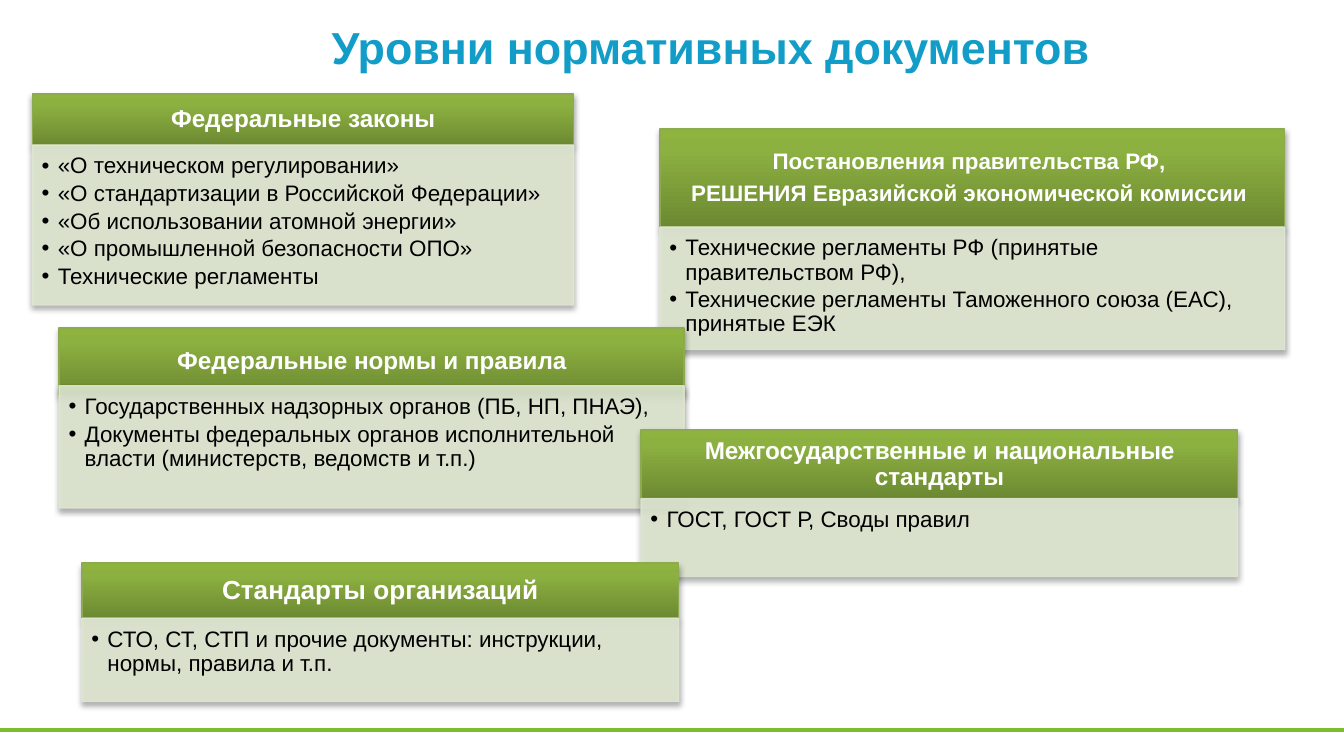
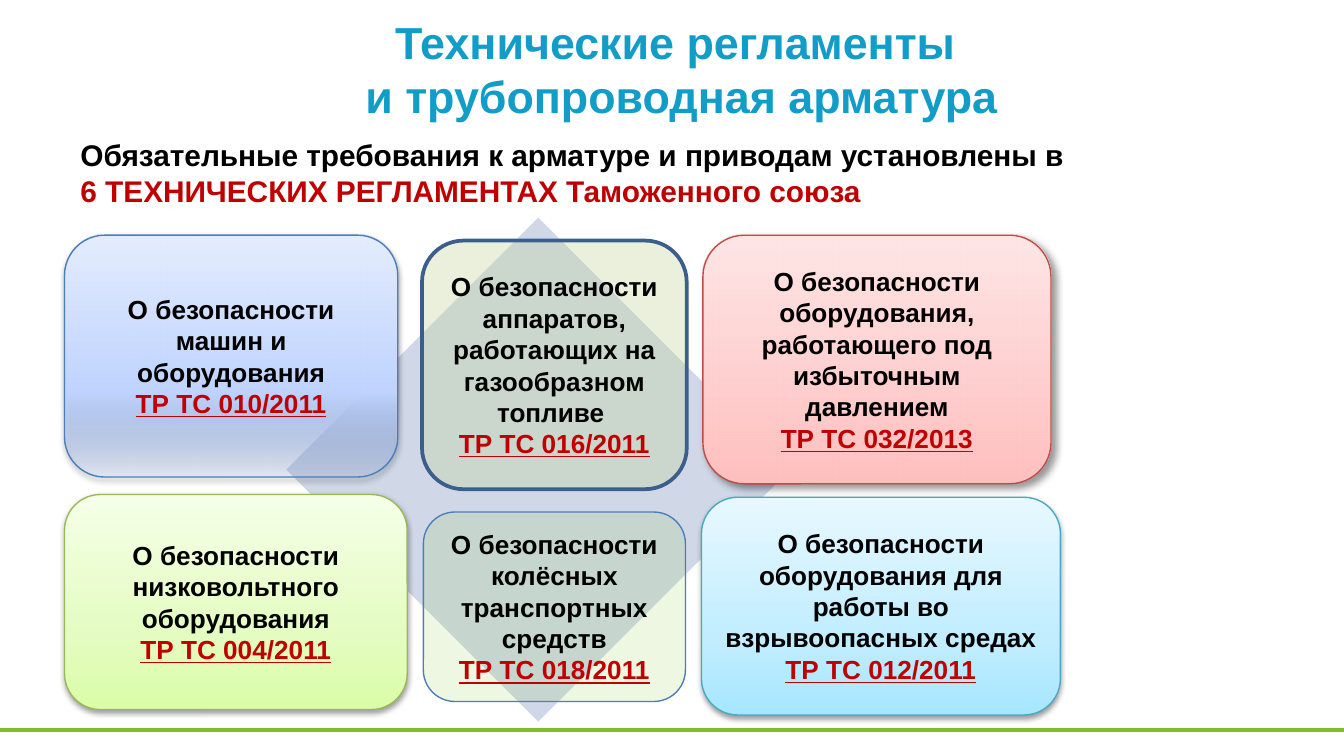
from dataclasses import dataclass

from lxml import etree
from pptx import Presentation
from pptx.dml.color import RGBColor
from pptx.enum.shapes import MSO_CONNECTOR, MSO_SHAPE
from pptx.enum.text import MSO_ANCHOR, MSO_AUTO_SIZE, PP_ALIGN
from pptx.oxml.ns import qn
from pptx.util import Inches, Pt

RECT, ROUND_RECT, DIAMOND = MSO_SHAPE.RECTANGLE, MSO_SHAPE.ROUNDED_RECTANGLE, MSO_SHAPE.DIAMOND
STRAIGHT = MSO_CONNECTOR.STRAIGHT
TOP, MIDDLE = MSO_ANCHOR.TOP, MSO_ANCHOR.MIDDLE
LEFT, CENTER = PP_ALIGN.LEFT, PP_ALIGN.CENTER
GROW = MSO_AUTO_SIZE.SHAPE_TO_FIT_TEXT

FONT = "Arial"
BLACK = RGBColor(0x00, 0x00, 0x00)
WHITE = RGBColor(0xFF, 0xFF, 0xFF)
TITLE_BLUE = RGBColor(0x12, 0x9D, 0xC8)
FOOTER_GREEN = RGBColor(0x7D, 0xBC, 0x2A)
ACCENT_RED = RGBColor(0xC0, 0x00, 0x00)
HEADER_EDGE = RGBColor(0x8D, 0xAA, 0x51)
BODY_GREEN = RGBColor(0xDE, 0xE7, 0xD1)
DIAMOND_BLUE = RGBColor(0xD0, 0xD8, 0xE8)
BLUE_EDGE = RGBColor(0x4B, 0x7E, 0xBC)
NAVY_EDGE = RGBColor(0x3A, 0x5F, 0x8C)
RED_EDGE = RGBColor(0xBF, 0x4C, 0x48)
LIME_EDGE = RGBColor(0x98, 0xB9, 0x55)
CYAN_EDGE = RGBColor(0x46, 0xAA, 0xC5)
OLIVE = RGBColor(0xC3, 0xD6, 0x9B)
LIME = RGBColor(0x92, 0xD0, 0x50)

HEADER_GRADIENT = ((0, RGBColor(0x6C, 0x89, 0x32), 100),
                   (80, RGBColor(0x8D, 0xB1, 0x41), 100),
                   (100, RGBColor(0x8E, 0xB4, 0x3F), 100))
BLUE_GRADIENT = ((0, RGBColor(0xA4, 0xC4, 0xFF), 14),
                 (35, RGBColor(0xBF, 0xD4, 0xFF), 100),
                 (100, RGBColor(0xE6, 0xEE, 0xFF), 100))
RED_GRADIENT = ((0, RGBColor(0xFF, 0xA6, 0xA5), 26),
                (0, RGBColor(0xFF, 0xC0, 0xBF), 100),
                (100, RGBColor(0xFF, 0xE7, 0xE7), 100))
LIME_GRADIENT = ((0, RGBColor(0xDA, 0xFD, 0xA7), 100),
                 (35, RGBColor(0xE4, 0xFC, 0xC2), 100),
                 (100, RGBColor(0xF5, 0xFF, 0xE7), 100))
CYAN_GRADIENT = ((0, RGBColor(0xA7, 0xE6, 0xFF), 100),
                 (35, RGBColor(0xC1, 0xED, 0xFF), 100),
                 (100, RGBColor(0xE7, 0xF8, 0xFF), 100))

CARD_SHADOW = (35, 3.1, 1.8, 90)
TILE_SHADOW = (38, 3.1, 1.6, 90)
SLANTED_SHADOW = (40, 4, 3, 45)

TILE_INSETS = (0.06, 0.06, 0.06, 0.06)
DEFAULT_INSETS = (0.1, 0.05, 0.1, 0.05)
HEADER_INSETS = (0.1, 0.06, 0.1, 0.06)
BODY_INSETS = (0.07, 0.07, 0.09, 0.1)


@dataclass
class Card:
    """A document level: header band with a bulleted body below."""
    left: float
    top: float
    width: float
    header_height: float
    body_height: float
    header: tuple
    size: int
    items: tuple
    overlap: float = 0


@dataclass
class Tile:
    """A regulation: rounded box with its subject and its number."""
    box: tuple
    subject: tuple
    number: str
    edge: RGBColor
    gradient: tuple = ()
    tint: RGBColor = None
    opacity: int = 100
    edge_width: float = 0.75
    shadow: tuple = ()
    insets: tuple = TILE_INSETS


CARDS = (
    Card(0.24, 0.7, 4.03, 0.38, 1.19, ("Федеральные законы",), 13,
         ("«О техническом регулировании»",
          "«О стандартизации в Российской Федерации»",
          "«Об использовании атомной энергии»",
          "«О промышленной безопасности ОПО»",
          "Технические регламенты")),
    Card(4.91, 0.96, 4.65, 0.73, 0.91,
         ("Постановления правительства РФ, ",
          "РЕШЕНИЯ Евразийской экономической комиссии "), 12,
         ("Технические регламенты РФ (принятые правительством РФ),",
          "Технические регламенты Таможенного союза (ЕАС), принятые ЕЭК")),
    Card(0.44, 2.44, 4.65, 0.5, 0.91, ("Федеральные нормы и правила",), 13,
         ("Государственных надзорных органов (ПБ, НП, ПНАЭ),",
          "Документы федеральных органов исполнительной власти "
          "(министерств, ведомств и т.п.)"), overlap=0.07),
    Card(4.77, 3.2, 4.44, 0.51, 0.58,
         ("Межгосударственные и национальные стандарты",), 13,
         ("ГОСТ, ГОСТ Р, Своды правил",)),
    Card(0.61, 4.19, 4.44, 0.41, 0.62, ("Стандарты организаций",), 14,
         ("СТО, СТ, СТП и прочие документы: инструкции, нормы, правила и т.п.",)),
)

TILES = (
    Tile((0.48, 1.75, 2.48, 1.8), ("О безопасности машин и оборудования",),
         "ТР ТС 010/2011", BLUE_EDGE, BLUE_GRADIENT, shadow=TILE_SHADOW),
    Tile((5.23, 1.75, 2.59, 1.85),
         ("О безопасности оборудования, работающего под избыточным", "давлением"),
         "ТР ТС 032/2013", RED_EDGE, RED_GRADIENT, shadow=SLANTED_SHADOW),
    Tile((0.48, 3.68, 2.55, 1.6), ("О безопасности низковольтного оборудования",),
         "ТР ТС 004/2011", LIME_EDGE, LIME_GRADIENT, shadow=TILE_SHADOW),
    Tile((5.22, 3.7, 2.67, 1.62),
         ("О безопасности оборудования для работы во взрывоопасных средах",),
         "ТР ТС 012/2011", CYAN_EDGE, CYAN_GRADIENT, shadow=TILE_SHADOW),
    Tile((3.14, 1.79, 1.97, 1.85),
         ("О безопасности аппаратов, работающих на газообразном топливе ",),
         "ТР ТС 016/2011", NAVY_EDGE, tint=OLIVE, opacity=35, edge_width=2,
         insets=DEFAULT_INSETS),
    Tile((3.15, 3.81, 1.95, 1.41), ("О безопасности колёсных транспортных средств",),
         "ТР ТС 018/2011", BLUE_EDGE, tint=LIME, opacity=16, insets=DEFAULT_INSETS),
)


def sub(parent, tag, **attributes):
    """Append a child element with the given attributes."""
    child = etree.SubElement(parent, qn(tag))
    for key, value in attributes.items():
        child.set(key, str(value))
    return child


def add_color(parent, color, opacity):
    """Append a colour with its opacity in percent."""
    sub(sub(parent, "a:srgbClr", val=color), "a:alpha", val=opacity * 1000)


def set_gradient(shape, stops):
    """Fill a shape with a gradient that runs from bottom to top."""
    gradient = etree.Element(qn("a:gradFill"), rotWithShape="1")
    stop_list = sub(gradient, "a:gsLst")
    for position, color, opacity in stops:
        add_color(sub(stop_list, "a:gs", pos=position * 1000), color, opacity)
    sub(gradient, "a:lin", ang=270 * 60000, scaled=0)
    shape._element.spPr.find(qn("a:prstGeom")).addnext(gradient)


def set_shadow(shape, opacity, blur, distance, angle):
    """Give a shape a soft black outer shadow."""
    effects = shape._element.spPr.find(qn("a:effectLst"))
    outer = sub(effects, "a:outerShdw", blurRad=Pt(blur), dist=Pt(distance),
                dir=angle * 60000, rotWithShape=0)
    add_color(outer, BLACK, opacity)


def add_panel(slide, kind, box, fill=None, gradient=(), opacity=100,
              edge=None, edge_width=0.75, edge_opacity=100, shadow=()):
    """Draw a preset shape with its fill, outline and shadow."""
    panel = slide.shapes.add_shape(kind, *map(Inches, box))
    panel.shadow.inherit = False
    if gradient:
        set_gradient(panel, gradient)
    else:
        panel.fill.solid()
        panel.fill.fore_color.rgb = fill
        color = panel._element.spPr.find(qn("a:solidFill"))[0]
        sub(color, "a:alpha", val=opacity * 1000)
    if edge is None:
        panel.line.fill.background()
    else:
        panel.line.color.rgb = edge
        panel.line.width = Pt(edge_width)
        color = panel._element.spPr.find(qn("a:ln")).find(qn("a:solidFill"))[0]
        sub(color, "a:alpha", val=edge_opacity * 1000)
    if shadow:
        set_shadow(panel, *shadow)
    return panel


def write(shape, lines, size, insets=DEFAULT_INSETS, anchor=MIDDLE, align=CENTER,
          bold=True, spacing=None, after=0, bullet=False):
    """Write (text, colour, underline) lines into a shape, one paragraph each."""
    frame = shape.text_frame
    frame.word_wrap = True
    frame.vertical_anchor = anchor
    (frame.margin_left, frame.margin_top,
     frame.margin_right, frame.margin_bottom) = map(Inches, insets)
    for index, (text, color, underline) in enumerate(lines):
        paragraph = frame.add_paragraph() if index else frame.paragraphs[0]
        paragraph.alignment = align
        if spacing:
            paragraph.line_spacing = spacing
        properties = paragraph._p.get_or_add_pPr()
        if after:
            sub(sub(properties, "a:spcAft"), "a:spcPct", val=after * 1000)
        if bullet:
            properties.set("marL", str(Inches(0.12)))
            properties.set("indent", str(-Inches(0.12)))
            sub(properties, "a:buFont", typeface=FONT)
            sub(properties, "a:buChar", char="•")
        run = paragraph.add_run()
        run.text = text
        run.font.name = FONT
        run.font.size = Pt(size)
        run.font.bold = bold
        run.font.underline = underline
        run.font.color.rgb = color


def plain(texts, color):
    """Pair each text with one colour and no underline."""
    return [(text, color, False) for text in texts]


def add_text(slide, box, lines, size, **style):
    """Add a text box that grows with its text."""
    textbox = slide.shapes.add_textbox(*map(Inches, box))
    write(textbox, lines, size, anchor=TOP, **style)
    textbox.text_frame.auto_size = GROW


def add_title(slide, box, texts, spacing=None):
    """Add the blue slide title."""
    add_text(slide, box, plain(texts, TITLE_BLUE), 24, spacing=spacing)


def add_card(slide, card):
    """Draw one level of documents."""
    header = add_panel(slide, RECT, (card.left, card.top, card.width, card.header_height),
                       gradient=HEADER_GRADIENT, edge=HEADER_EDGE, shadow=CARD_SHADOW)
    write(header, plain(card.header, WHITE), card.size, HEADER_INSETS,
          spacing=0.9, after=35)
    body_top = card.top + card.header_height - card.overlap
    body = add_panel(slide, RECT, (card.left, body_top, card.width, card.body_height),
                     fill=BODY_GREEN, opacity=90, edge=BODY_GREEN, edge_opacity=90,
                     shadow=CARD_SHADOW)
    write(body, plain(card.items, BLACK), 12, BODY_INSETS, anchor=TOP, align=LEFT,
          bold=False, spacing=0.9, after=15, bullet=True)


def add_tile(slide, tile):
    """Draw one regulation."""
    panel = add_panel(slide, ROUND_RECT, tile.box, tile.tint, tile.gradient, tile.opacity,
                      tile.edge, tile.edge_width, shadow=tile.shadow)
    write(panel, plain(tile.subject, BLACK) + [(tile.number, ACCENT_RED, True)],
          14, tile.insets)


def add_slide(deck):
    """Add a blank slide with the green footer line."""
    slide = deck.slides.add_slide(deck.slide_layouts[6])
    footer = slide.shapes.add_connector(STRAIGHT, 0, Inches(5.43), Inches(10), Inches(5.43))
    footer.line.color.rgb = FOOTER_GREEN
    footer.line.width = Pt(2.25)
    sub(footer._element.spPr, "a:effectLst")
    return slide


def main():
    """Build both slides and save the deck."""
    deck = Presentation()
    deck.slide_width = Inches(10)
    deck.slide_height = Inches(10) * 9 // 16

    levels = add_slide(deck)
    for card in CARDS:
        add_card(levels, card)
    add_title(levels, (0.24, 0, 10, 0.6), (" Уровни нормативных документов",), Pt(36))

    regulations = add_slide(deck)
    add_title(regulations, (0.14, 0.06, 9.86, 0.91),
              ("Технические регламенты ", "и трубопроводная арматура"))
    add_text(regulations, (0.5, 0.97, 9.45, 0.64),
             [("Обязательные требования к арматуре и приводам установлены в", BLACK, False),
              ("6 ТЕХНИЧЕСКИХ РЕГЛАМЕНТАХ Таможенного союза", ACCENT_RED, False)],
             16, align=LEFT)
    add_panel(regulations, DIAMOND, (2.13, 1.62, 3.75, 3.75), fill=DIAMOND_BLUE)
    for tile in TILES:
        add_tile(regulations, tile)

    deck.save("out.pptx")


if __name__ == "__main__":
    main()
